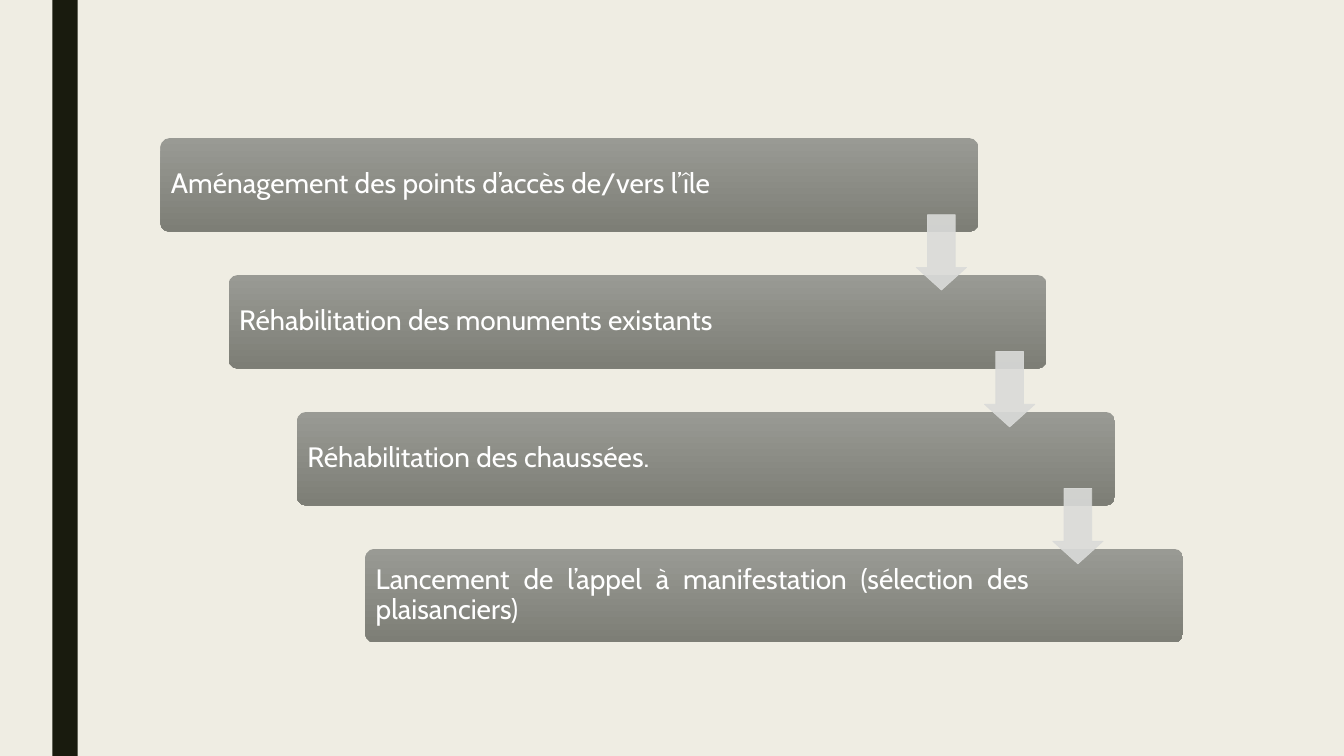
"""Build a slide of four project steps, set as a staircase and joined by arrows."""
from dataclasses import dataclass

from lxml.etree import SubElement
from pptx import Presentation
from pptx.dml.color import RGBColor as Rgb
from pptx.enum.shapes import MSO_SHAPE as Kind
from pptx.enum.text import MSO_ANCHOR as Anchor, PP_ALIGN as Align
from pptx.oxml.ns import qn
from pptx.util import Cm, Pt

LEFT, TOP = 4.04, 3.48
SHIFT, DROP = 1.72, 3.45
WIDE, HIGH = 20.62, 2.36
EDGE = 0.07
PALE = "DADBD9"
FRAME = {
    "word_wrap": True,
    "vertical_anchor": Anchor.MIDDLE,
    "margin_left": Cm(0.2),
    "margin_right": Cm(0.2),
    "margin_top": Cm(0.2),
    "margin_bottom": Cm(0.2),
}
PARA = {"line_spacing": 0.9, "space_after": Pt(7)}
FONT = {"name": "Cabin", "size": Pt(20)}


@dataclass
class Step:
    text: str
    width: float
    align: Align = Align.LEFT


STEPS = [
    Step("Aménagement des points d’accès de/vers l’île", 17.27),
    Step("Réhabilitation des monuments existants", 16.87),
    Step("Réhabilitation des chaussées.", 16.87),
    Step("Lancement de l’appel à manifestation (sélection des plaisanciers)",
         16.87, Align.JUSTIFY),
]


def tint(color, code: str) -> None:
    color.rgb = Rgb.from_string(code)


def apply(item, values: dict) -> None:
    for name, value in values.items():
        setattr(item, name, value)


def add_form(slide, kind: Kind, box: tuple, adjust: tuple = ()):
    form = slide.shapes.add_shape(kind, *map(Cm, box))
    form.shadow.inherit = False
    form.line.fill.background()
    for spot, value in enumerate(adjust):
        form.adjustments[spot] = value
    return form


def add_step(slide, step: Step, x: float, y: float) -> None:
    card = add_form(slide, Kind.ROUNDED_RECTANGLE, (x, y, WIDE, HIGH), (0.1,))
    card.fill.gradient()
    card.fill.gradient_angle = 270
    for stop, code in zip(card.fill.gradient_stops, ("999A94", "7D7E76")):
        tint(stop.color, code)

    box = (x + EDGE, y + EDGE, step.width, HIGH - 2 * EDGE)
    frame = slide.shapes.add_textbox(*map(Cm, box)).text_frame
    apply(frame, FRAME)
    para = frame.paragraphs[0]
    apply(para, PARA | {"alignment": step.align})
    run = para.add_run()
    run.text = step.text
    apply(run.font, FONT)
    tint(run.font.color, "FFFFFF")


def add_arrow(slide, x: float, y: float) -> None:
    arrow = add_form(slide, Kind.DOWN_ARROW, (x, y, 1.27, 1.9), (0.55, 0.45))
    arrow.line.width = Pt(0.5)
    for fill in (arrow.fill, arrow.line.fill):
        fill.solid()
        tint(fill.fore_color, PALE)
    for color in arrow._element.spPr.iter(qn("a:srgbClr")):
        SubElement(color, qn("a:alpha"), val="90000")


def main() -> None:
    deck = Presentation()
    deck.slide_width, deck.slide_height = Cm(33.87), Cm(19.05)
    slide = deck.slides.add_slide(deck.slide_layouts[6])
    back = slide.background.fill
    back.solid()
    tint(back.fore_color, "EFEDE3")

    band = add_form(slide, Kind.RECTANGLE, (1.32, 0, 0.64, 19.05))
    band.fill.solid()
    tint(band.fill.fore_color, "191B0E")

    spots = [(LEFT + n * SHIFT, TOP + n * DROP) for n in range(len(STEPS))]
    for step, (x, y) in zip(STEPS, spots):
        add_step(slide, step, x, y)
    for x, y in spots[:-1]:
        add_arrow(slide, x + 19.05, y + 1.93)
    deck.save("out.pptx")


if __name__ == "__main__":
    main()
